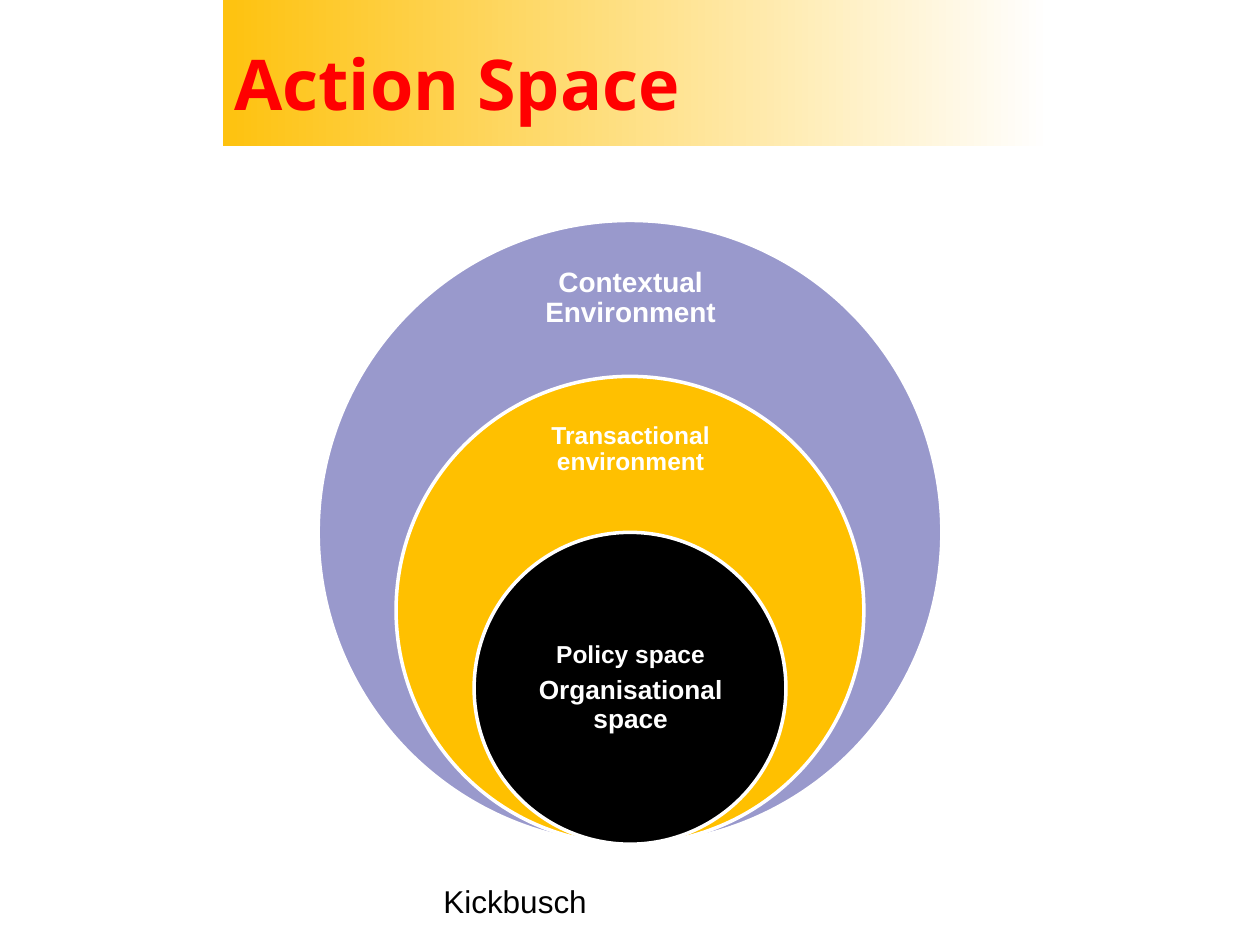
from dataclasses import dataclass
from pptx import Presentation
from pptx.dml.color import RGBColor
from pptx.enum.shapes import MSO_SHAPE
from pptx.enum.text import MSO_ANCHOR, PP_ALIGN
from pptx.util import Inches, Pt

WIDE, HIGH = 10, 7.5
HUES = {"lilac": "9999CC", "amber": "FFC000", "gold": "FEC20F",
        "black": "000000", "white": "FFFFFF", "red": "FF0000"}
BASE = 6.7   # all rings rest on this line
SPAN = 4.95  # width of the outer ring


@dataclass
class Line:
    text: str
    size: int
    hue: str = "white"
    bold: bool = True
    face: str = "Arial"


@dataclass
class Label:
    lines: list[Line]
    left: float
    top: float
    width: float
    height: float
    inset: float = 0.1
    format: dict | None = None
    anchor: MSO_ANCHOR = MSO_ANCHOR.MIDDLE


@dataclass
class Ring:
    share: float
    hue: str
    label: Label


def tint(name: str) -> RGBColor:
    return RGBColor.from_string(HUES[name])


def write(shapes, label: Label) -> None:
    box = shapes.add_textbox(Inches(label.left), Inches(label.top),
                             Inches(label.width), Inches(label.height))
    frame = box.text_frame
    frame.word_wrap = True
    frame.vertical_anchor = label.anchor
    if label.format:
        for side in ("left", "right", "top", "bottom"):
            setattr(frame, f"margin_{side}", Inches(label.inset))
    for i, line in enumerate(label.lines):
        para = frame.add_paragraph() if i else frame.paragraphs[0]
        for name, value in (label.format or {}).items():
            setattr(para, name, value)
        run = para.add_run()
        run.text = line.text
        style = {"size": Pt(line.size), "bold": line.bold, "name": line.face}
        for name, value in style.items():
            setattr(run.font, name, value)
        run.font.color.rgb = tint(line.hue)


def draw(shapes, ring: Ring) -> None:
    size = SPAN * ring.share
    disc = shapes.add_shape(MSO_SHAPE.OVAL, Inches((WIDE - size) / 2),
                            Inches(BASE - size), Inches(size), Inches(size))
    disc.shadow.inherit = False
    disc.fill.solid()
    disc.fill.fore_color.rgb = tint(ring.hue)
    disc.line.color.rgb = tint("white")
    disc.line.width = Pt(2)
    write(shapes, ring.label)


def band(shapes) -> None:
    """Draw the title band, fading from gold to white."""
    bar = shapes.add_shape(MSO_SHAPE.RECTANGLE, Inches(1.77), 0,
                           Inches(6.56), Inches(1.16))
    bar.shadow.inherit = False
    bar.line.fill.background()
    bar.fill.gradient()
    bar.fill.gradient_angle = 0
    for stop, hue, place in zip(bar.fill.gradient_stops, ("gold", "white"), (0, 1)):
        stop.color.rgb = tint(hue)
        stop.position = place


CENTRED = {"alignment": PP_ALIGN.CENTER, "line_spacing": 0.9, "space_after": Pt(5)}
RINGS = [
    Ring(1, "lilac", Label([Line("Contextual Environment", 16)],
                           4.14, 2, 1.73, 0.74, 0.12, CENTRED)),
    Ring(0.75, "amber", Label([Line("Transactional environment", 14)],
                              4.14, 3.22, 1.73, 0.7, 0.11, CENTRED)),
    Ring(0.5, "black", Label([Line("Policy space", 14),
                              Line("Organisational space", 15)],
                             4.13, 4.84, 1.75, 1.24, 0.11, CENTRED)),
]
TITLE = Label([Line("Action Space", 40, "red", face="Open Sans")],
              1.76, 0.14, 6.6, 1.03)
CREDIT = Label([Line("Kickbusch", 18, "black", False)],
               3.42, 6.95, 3.17, 0.4, anchor=MSO_ANCHOR.TOP)


def main() -> None:
    deck = Presentation()
    deck.slide_width, deck.slide_height = Inches(WIDE), Inches(HIGH)
    shapes = deck.slides.add_slide(deck.slide_layouts[6]).shapes
    band(shapes)
    write(shapes, TITLE)
    for ring in RINGS:
        draw(shapes, ring)
    write(shapes, CREDIT)
    deck.save("out.pptx")


if __name__ == "__main__":
    main()
